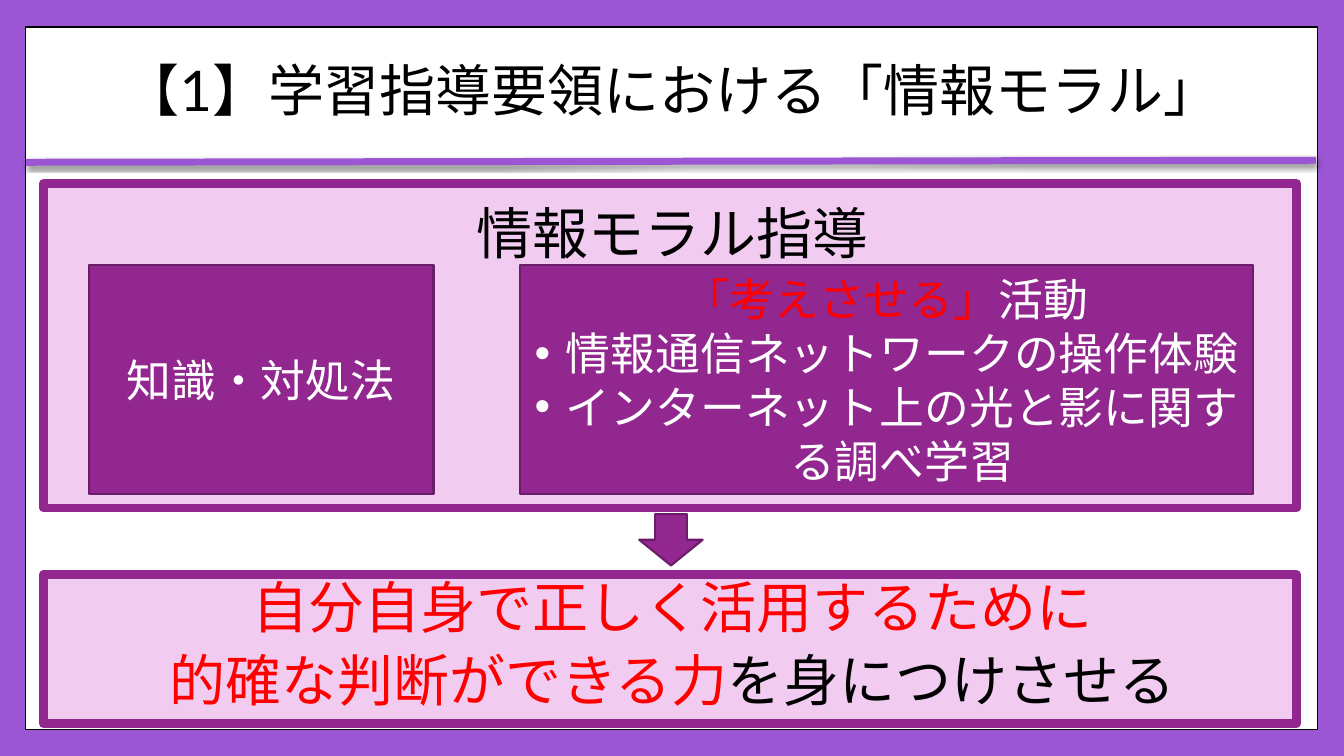
from dataclasses import dataclass

from lxml.etree import SubElement
from pptx import Presentation
from pptx.dml.color import RGBColor
from pptx.enum.shapes import MSO_CONNECTOR, MSO_SHAPE
from pptx.enum.text import MSO_ANCHOR, PP_ALIGN
from pptx.oxml.ns import qn
from pptx.util import Emu, Pt

EMU_PER_PX = 9144


@dataclass(frozen=True)
class Theme:
    violet: str = "9B57D3"
    plum: str = "92278F"
    dark_plum: str = "6C1D6A"
    pink: str = "F1CCF0"
    red: str = "FF0000"
    black: str = "000000"
    white: str = "FFFFFF"
    heading_size: int = 40
    body_size: int = 32
    title_font: str = "Lato"
    body_font: str = "Arial"


THEME = Theme()


@dataclass(frozen=True)
class BoxStyle:
    fill: str
    line: str
    line_width: float
    text_size: int = THEME.body_size
    line_spacing: float = 1.0
    space_before: int = 0
    indent: int = 0


@dataclass(frozen=True)
class Line:
    phrases: tuple[tuple[str, str], ...]
    bullet: bool = False


@dataclass(frozen=True)
class Box:
    left: int
    top: int
    width: int
    height: int
    style: BoxStyle
    lines: tuple[Line, ...] = ()
    preset: MSO_SHAPE = MSO_SHAPE.RECTANGLE
    top_inset: int | None = None


FRAME = BoxStyle(THEME.white, THEME.black, 1)
PANEL = BoxStyle(THEME.pink, THEME.plum, 6, THEME.heading_size, 0.8, 14, 5)
CARD = BoxStyle(THEME.plum, THEME.dark_plum, 1.5)

PANEL_LEFT, PANEL_WIDTH = 43, 1243
CARD_TOP, CARD_HEIGHT = 263, 227
BULLET_INDENT = 31

TITLE = Line((("【1】学習指導要領における「情報モラル」", THEME.black),))
GUIDANCE = Line((("情報モラル指導", THEME.black),))
KNOWLEDGE = Line((("知識・対処法", THEME.white),))
ACTIVITIES = (
    Line((("「考えさせる」", THEME.red), ("活動", THEME.white))),
    Line((("情報通信ネットワークの操作体験", THEME.white),), bullet=True),
    Line((("インターネット上の光と影に関する調べ学習", THEME.white),), bullet=True),
)
GOAL = (
    Line((("自分自身で正しく活用するために", THEME.red),)),
    Line((("的確な判断ができる力", THEME.red), ("を身につけさせる", THEME.black))),
)

BOXES = (
    Box(PANEL_LEFT, 182, PANEL_WIDTH, 322, PANEL, (GUIDANCE,), top_inset=28),
    Box(88, CARD_TOP, 342, CARD_HEIGHT, CARD, (KNOWLEDGE,)),
    Box(516, CARD_TOP, 727, CARD_HEIGHT, CARD, ACTIVITIES),
    Box(PANEL_LEFT, 570, PANEL_WIDTH, 148, PANEL, GOAL),
    Box(634, 510, 63, 51, CARD, preset=MSO_SHAPE.DOWN_ARROW),
)


def px(length: int) -> Emu:
    return Emu(length * EMU_PER_PX)


def rgb(color: str) -> RGBColor:
    return RGBColor.from_string(color)


def write_line(paragraph, line: Line, size: int, font_name: str) -> None:
    paragraph.alignment = PP_ALIGN.CENTER
    paragraph.text = ""
    for text, color in line.phrases:
        run = paragraph.add_run()
        run.text = text
        run.font.size = Pt(size)
        run.font.name = font_name
        run.font.color.rgb = rgb(color)


def indent_line(paragraph, line: Line, style: BoxStyle) -> None:
    properties = paragraph._p.get_or_add_pPr()
    indent = BULLET_INDENT if line.bullet else style.indent
    properties.set("marL", str(px(indent)))
    properties.set("indent", str(px(-indent if line.bullet else 0)))
    if line.bullet:
        SubElement(properties, qn("a:buFont"), typeface=THEME.body_font)
        SubElement(properties, qn("a:buChar"), char="•")


def draw_box(slide, box: Box) -> None:
    style = box.style
    shape = slide.shapes.add_shape(
        box.preset, px(box.left), px(box.top), px(box.width), px(box.height)
    )
    shape.shadow.inherit = False
    shape.fill.solid()
    shape.fill.fore_color.rgb = rgb(style.fill)
    shape.line.color.rgb = rgb(style.line)
    shape.line.width = Pt(style.line_width)
    text_frame = shape.text_frame
    text_frame.word_wrap = True
    text_frame.vertical_anchor = MSO_ANCHOR.MIDDLE
    if box.top_inset is not None:
        text_frame.vertical_anchor = MSO_ANCHOR.TOP
        text_frame.margin_top = px(box.top_inset)
    for index, line in enumerate(box.lines):
        paragraph = text_frame.add_paragraph() if index else text_frame.paragraphs[0]
        paragraph.line_spacing = style.line_spacing
        paragraph.space_before = Pt(style.space_before if index else 0)
        indent_line(paragraph, line, style)
        write_line(paragraph, line, style.text_size, THEME.body_font)


def draw_title(slide) -> None:
    title = slide.shapes.add_textbox(px(26), px(36), px(1280), px(114))
    text_frame = title.text_frame
    text_frame.word_wrap = True
    text_frame.vertical_anchor = MSO_ANCHOR.MIDDLE
    paragraph = text_frame.paragraphs[0]
    paragraph.line_spacing = 0.9
    write_line(paragraph, TITLE, THEME.heading_size, THEME.title_font)


def draw_divider(slide) -> None:
    divider = slide.shapes.add_connector(
        MSO_CONNECTOR.STRAIGHT, px(26), px(161), px(1305), px(159)
    )
    divider.line.color.rgb = rgb(THEME.violet)
    divider.line.width = Pt(5)
    effects = SubElement(divider._element.spPr, qn("a:effectLst"))
    shadow = SubElement(
        effects, qn("a:outerShdw"),
        blurRad=str(Pt(3)), dist=str(Pt(2)), dir="5400000", rotWithShape="0",
    )
    color = SubElement(shadow, qn("a:srgbClr"), val=THEME.black)
    SubElement(color, qn("a:alpha"), val="45000")


def main() -> None:
    presentation = Presentation()
    presentation.slide_width = px(1333)
    presentation.slide_height = px(750)
    slide = presentation.slides.add_slide(presentation.slide_layouts[6])
    slide.background.fill.solid()
    slide.background.fill.fore_color.rgb = rgb(THEME.violet)
    draw_box(slide, Box(25, 27, 1282, 697, FRAME))
    draw_divider(slide)
    draw_title(slide)
    for box in BOXES:
        draw_box(slide, box)
    presentation.save("out.pptx")


if __name__ == "__main__":
    main()
